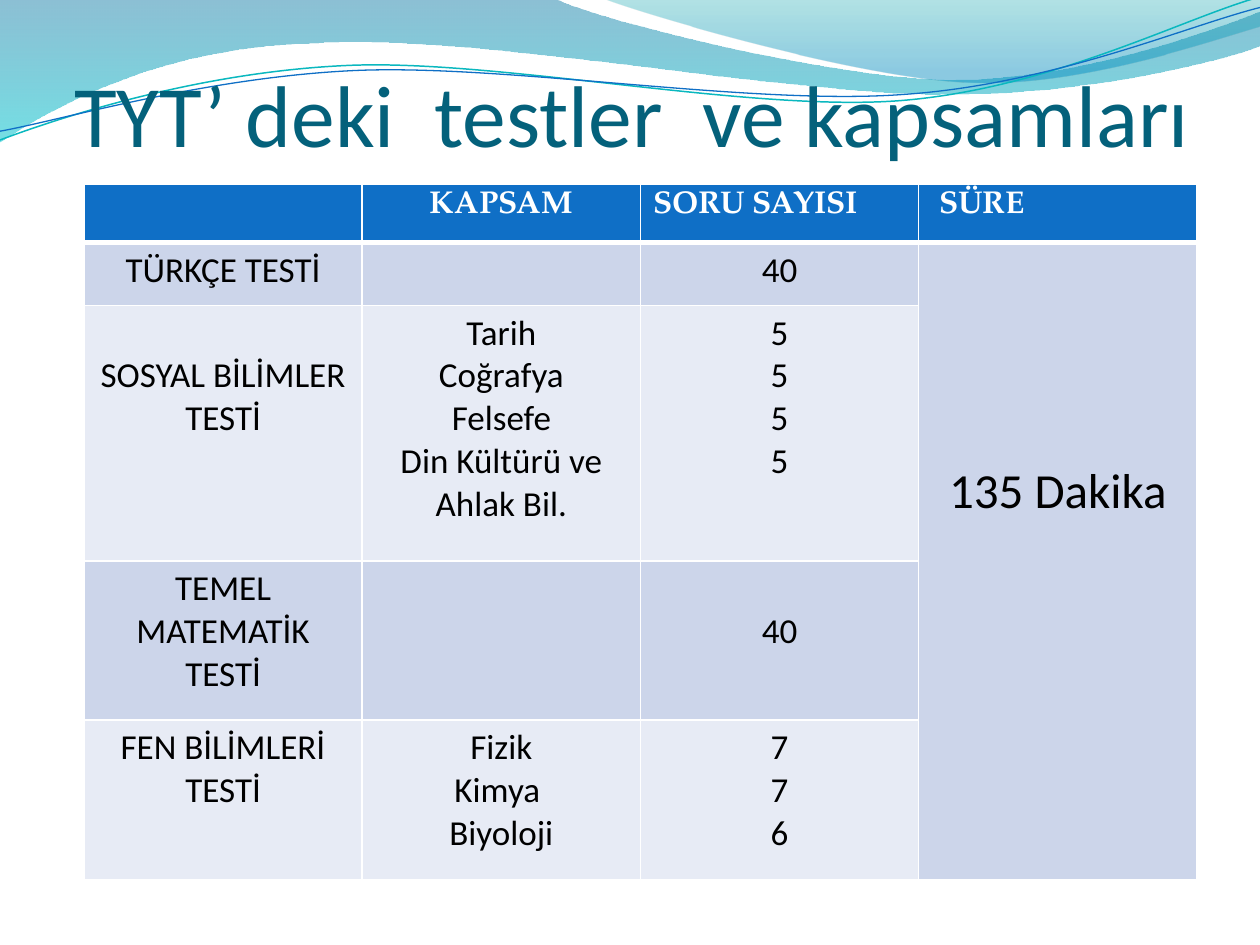
from dataclasses import dataclass
from typing import Optional

from lxml.etree import SubElement
from pptx import Presentation
from pptx.dml.color import RGBColor
from pptx.enum.text import MSO_ANCHOR, PP_ALIGN
from pptx.oxml.ns import qn
from pptx.util import Pt

COLORS = {
    "title": "04617B", "header": "0F6FC6", "band": "CCD5EA", "light": "E7EBF5",
    "white": "FFFFFF", "black": "000000", "teal": "0AB8BF",
}
BODY_FONT, HEADER_FONT = "Calibri", "TeX Gyre Pagella"
Point = tuple[float, float]


@dataclass
class Stop:
    position: float
    color: str
    opacity: int  # percent


@dataclass
class Wave:
    start: Point
    segments: list[list[Point]]  # one point: straight, three points: Bézier
    stops: Optional[list[Stop]] = None  # filled waves
    line: Optional[str] = None  # stroked waves
    width: float = 0.75


@dataclass
class Entry:
    lines: list[str]
    size: float = 20
    top: float = 3.6  # margin above the text
    align: PP_ALIGN = PP_ALIGN.CENTER


WAVES = [
    Wave((0, 0), [
        [(316.8, -0.7)],
        [(343, 12), (478, 45.4), (545.8, 45.4)],
        [(614, 45.4), (690, 18.7), (720, 6.5)],
        [(720.7, 26)],
        [(707.8, 31.7), (626.4, 54.7), (537, 54)],
        [(447.8, 54), (275, 20.2), (185, 24.5)],
        [(92.9, 26), (33, 59.8), (-0.7, 81.4)],
        [(0, 0)],
    ], stops=[Stop(0, "0074A1", 45), Stop(1, "00C6CF", 55)]),
    Wave((345, -0.7), [
        [(366.5, 8), (491, 44.6), (553.7, 46.8)],
        [(616.3, 49.7), (692, 23), (720, 15)],
        [(720, 0)],
        [(345, -0.7)],
    ], stops=[Stop(0, "00A1A9", 30), Stop(0.8, "008BBF", 45)]),
    Wave((0, 80), [
        [(34.6, 67), (113.8, 41), (199.4, 37.4)],
        [(284.4, 33.8), (427, 64), (513.4, 57.6)],
        [(599.8, 51), (675.4, 10.8), (718.6, -1.4)],
    ], line="teal", width=0.85),
    Wave((0, 75), [
        [(33.8, 69), (118, 44), (203.8, 40.3)],
        [(290, 36.7), (429.8, 60.5), (516.2, 54)],
        [(602, 48.2), (677.5, 15), (720, 4.3)],
    ], line="header"),
]

COLUMN_WIDTH = 159
ROW_HEIGHTS = [33, 36, 146, 91, 91]
LINE = 24.4  # height of a 20 pt line
EMPTY = Entry([])
ROWS = [
    [EMPTY, Entry(["KAPSAM"], 18), Entry(["SORU SAYISI"], 18, align=PP_ALIGN.LEFT),
     Entry([" SÜRE"], 18, align=PP_ALIGN.LEFT)],
    [Entry(["TÜRKÇE TESTİ"]), EMPTY, Entry(["40"]),
     Entry(["135 Dakika"], 28, 3.6 + 5 * LINE)],
    [Entry(["SOSYAL BİLİMLER TESTİ"], top=3.6 + LINE),
     Entry(["Tarih", "Coğrafya", "Felsefe", "Din Kültürü ve Ahlak Bil."]),
     Entry(["5"] * 4), EMPTY],
    [Entry(["TEMEL MATEMATİK TESTİ"]), EMPTY, Entry(["40"], top=3.6 + LINE), EMPTY],
    [Entry(["FEN BİLİMLERİ TESTİ"]), Entry(["Fizik", "Kimya ", "Biyoloji"]),
     Entry(["7", "7", "6"]), EMPTY],
]


def rgb(name: str) -> RGBColor:
    return RGBColor.from_string(COLORS[name])


def bend_segments(shape, segments: list[list[Point]]) -> None:
    """Join the straight steps of each three-point segment into one Bézier curve."""
    steps = iter(list(shape._element.iter(qn("a:lnTo"))))
    for segment in segments:
        group = [next(steps) for _ in segment]
        if len(group) == 1:
            continue
        outline = group[0].getparent()
        curve = SubElement(outline, qn("a:cubicBezTo"))
        outline.insert(outline.index(group[0]), curve)
        for step in group:
            curve.append(step[0])
            outline.remove(step)


def draw_wave(page, wave: Wave) -> None:
    points = [point for segment in wave.segments for point in segment]
    builder = page.shapes.build_freeform(*map(Pt, wave.start), scale=1.0)
    builder.add_line_segments([(Pt(x), Pt(y)) for x, y in points],
                              close=wave.stops is not None)
    shape = builder.convert_to_shape()
    bend_segments(shape, wave.segments)
    shape.shadow.inherit = False
    if wave.stops is None:
        shape.fill.background()
        shape.line.color.rgb = rgb(wave.line)
        shape.line.width = Pt(wave.width)
        return
    shape.line.fill.background()
    shape.fill.gradient()
    shape.fill.gradient_angle = 270
    for target, stop in zip(shape.fill.gradient_stops, wave.stops):
        target.position = stop.position
        target.color.rgb = RGBColor.from_string(stop.color)
    fill_colors = shape._element.spPr.find(qn("a:gradFill")).iter(qn("a:srgbClr"))
    for color, stop in zip(list(fill_colors), wave.stops):
        SubElement(color, qn("a:alpha")).set("val", str(stop.opacity * 1000))


def style_span(span, font: str, size: float, color: str, bold: bool = False) -> None:
    span.font.name = font
    span.font.size = Pt(size)
    span.font.bold = bold
    span.font.color.rgb = rgb(color)


def draw_title(page, text: str) -> None:
    box = page.shapes.add_textbox(Pt(42.5), Pt(15), Pt(641.5), Pt(79.2))
    frame = box.text_frame
    frame.word_wrap = True
    frame.vertical_anchor = MSO_ANCHOR.BOTTOM
    frame.margin_left = frame.margin_right = frame.margin_bottom = 0
    frame.margin_top = Pt(3.6)
    frame.text = text
    style_span(frame.paragraphs[0].runs[0], BODY_FONT, 50, "title")


def set_borders(cell, bottom: float) -> None:
    properties = cell._tc.get_or_add_tcPr()
    widths = {"a:lnL": 1, "a:lnR": 1, "a:lnT": 1, "a:lnB": bottom}
    for index, (tag, width) in enumerate(widths.items()):
        border = SubElement(properties, qn(tag), w=str(Pt(width)))
        fill = SubElement(border, qn("a:solidFill"))
        SubElement(fill, qn("a:srgbClr"), val=COLORS["white"])
        properties.insert(index, border)


def fill_cell(cell, entry: Entry, fill: str, header: bool) -> None:
    cell.fill.solid()
    cell.fill.fore_color.rgb = rgb(fill)
    set_borders(cell, bottom=3 if header else 1)
    cell.margin_top = Pt(entry.top)
    if not entry.lines:
        return
    cell.text_frame.text = "\n".join(entry.lines)
    font, color = (HEADER_FONT, "white") if header else (BODY_FONT, "black")
    for paragraph in cell.text_frame.paragraphs:
        paragraph.alignment = entry.align
        style_span(paragraph.runs[0], font, entry.size, color, header)


def draw_table(page) -> None:
    columns = len(ROWS[0])
    table = page.shapes.add_table(
        len(ROWS), columns, Pt(48), Pt(105.5),
        Pt(COLUMN_WIDTH * columns), Pt(sum(ROW_HEIGHTS))).table
    table.horz_banding = False
    for column in table.columns:
        column.width = Pt(COLUMN_WIDTH)
    for row, height in zip(table.rows, ROW_HEIGHTS):
        row.height = Pt(height)
    # The duration spans all tests
    table.cell(1, 3).merge(table.cell(4, 3))
    for r, entries in enumerate(ROWS):
        for c, entry in enumerate(entries):
            fill = "header" if r == 0 else "band" if r % 2 or c == 3 else "light"
            fill_cell(table.cell(r, c), entry, fill, header=r == 0)


def main() -> None:
    deck = Presentation()
    deck.slide_width, deck.slide_height = Pt(720), Pt(540)
    page = deck.slides.add_slide(deck.slide_layouts[6])
    # Decorative waves along the top
    for wave in WAVES:
        draw_wave(page, wave)
    draw_title(page, "TYT’ deki  testler  ve kapsamları")
    draw_table(page)
    deck.save("out.pptx")


if __name__ == "__main__":
    main()
